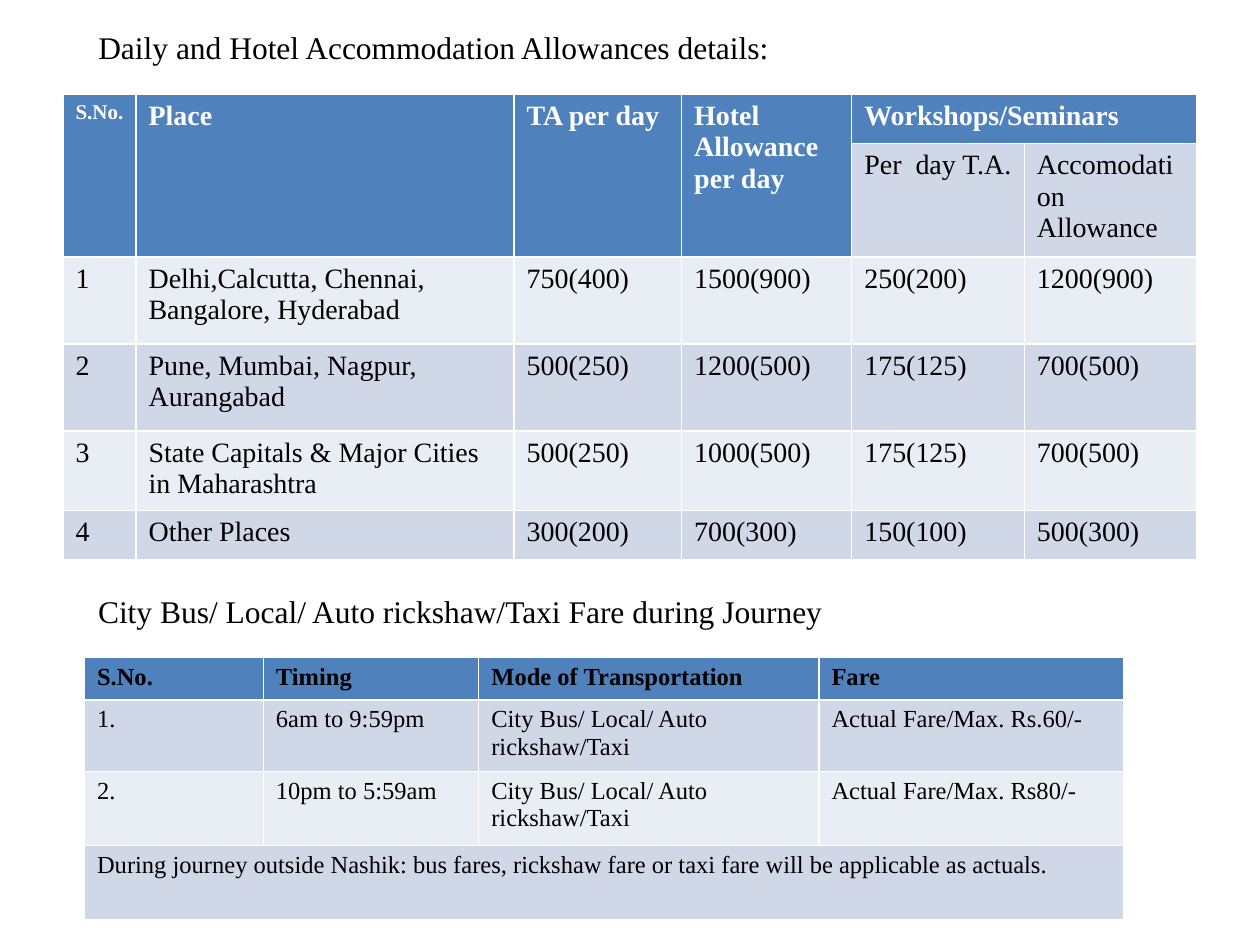
from dataclasses import dataclass

from pptx import Presentation
from pptx.dml.color import RGBColor as RGB
from pptx.enum.text import MSO_ANCHOR as ANCHOR, MSO_AUTO_SIZE as FIT, PP_ALIGN as ALIGN
from pptx.util import Inches, Pt

W, H = Inches(10), Inches(7.5)
FONT = "Times New Roman"
COLORS = {"header": "4F81BD", "odd": "D0D8E8", "even": "E9EDF4",
          "light": "FFFFFF", "dark": "000000"}


@dataclass
class TableSpec:
    """Lengths are percentages of the slide's width or height."""
    left: float
    top: float
    cols: list[float]
    rows: list[float]
    size: int
    header_color: str
    spans: list[tuple[int, int, int, int]]  # row, column, rows, columns
    cells: list[list[str]]


def across(share: float) -> int:
    return round(W * share / 100)


def down(share: float) -> int:
    return round(H * share / 100)


def format_text(tf, size: int, color: str, bold: bool = False) -> None:
    look = {"name": FONT, "size": Pt(size), "bold": bold}
    for p in tf.paragraphs:
        for r in p.runs:
            for key, value in look.items():
                setattr(r.font, key, value)
            r.font.color.rgb = RGB.from_string(COLORS[color])


def place_heading(sp, text: str, top: float) -> None:
    box = {"left": across(6.8), "top": down(top),
           "width": across(80), "height": down(5.33)}
    for key, value in box.items():
        setattr(sp, key, value)
    tf = sp.text_frame
    tf.text = text
    for key, value in {"word_wrap": True, "vertical_anchor": ANCHOR.TOP,
                       "auto_size": FIT.SHAPE_TO_FIT_TEXT}.items():
        setattr(tf, key, value)
    tf.paragraphs[0].alignment = ALIGN.LEFT
    format_text(tf, 18, "dark")


def draw_table(s, spec: TableSpec):
    table = s.shapes.add_table(
        len(spec.rows), len(spec.cols), across(spec.left), down(spec.top),
        across(sum(spec.cols)), down(sum(spec.rows))).table
    for col, share in zip(table.columns, spec.cols):
        col.width = across(share)
    for row, share in zip(table.rows, spec.rows):
        row.height = down(share)
    for row, col, n_rows, n_cols in spec.spans:
        table.cell(row, col).merge(table.cell(row + n_rows - 1, col + n_cols - 1))

    # Header row, then alternating bands
    for i, texts in enumerate(spec.cells):
        band = "header" if i == 0 else "odd" if i % 2 else "even"
        for j, text in enumerate(texts):
            cell = table.cell(i, j)
            cell.fill.solid()
            cell.fill.fore_color.rgb = RGB.from_string(COLORS[band])
            if text:
                cell.text = text
                format_text(cell.text_frame, spec.size,
                            spec.header_color if i == 0 else "dark", i == 0)
    return table


ALLOWANCES = TableSpec(
    left=5, top=10, size=16, header_color="light",
    cols=[5.8, 30, 13.3, 13.5, 13.7, 13.7],
    rows=[5.2, 10.27, 9.2, 9.2, 5.2, 5.2],
    spans=[(0, col, 2, 1) for col in range(4)] + [(0, 4, 1, 2)],
    cells=[
        ["S.No.", "Place", "TA per day", "Hotel Allowance per day", "Workshops/Seminars", ""],
        ["", "", "", "", "Per  day T.A.", "Accomodation Allowance"],
        ["1", "Delhi,Calcutta, Chennai, Bangalore, Hyderabad",
         "750(400)", "1500(900)", "250(200)", "1200(900)"],
        ["2", "Pune, Mumbai, Nagpur, Aurangabad",
         "500(250)", "1200(500)", "175(125)", "700(500)"],
        ["3", "State Capitals & Major Cities in Maharashtra",
         "500(250)", "1000(500)", "175(125)", "700(500)"],
        ["4", "Other Places", "300(200)", "700(300)", "150(100)", "500(300)"],
    ])

MODE = "City Bus/ Local/ Auto rickshaw/Taxi"
FARES = TableSpec(
    left=6.7, top=69.6, size=14, header_color="dark",
    cols=[14.2, 17.1, 27, 24.2],
    rows=[4.13, 7.07, 7.87, 7.87],
    spans=[(3, 0, 1, 4)],
    cells=[
        ["S.No.", "Timing", "Mode of Transportation", "Fare"],
        ["1.", "6am to 9:59pm", MODE, "Actual Fare/Max. Rs.60/-"],
        ["2.", "10pm to 5:59am", MODE, "Actual Fare/Max. Rs80/-"],
        ["During journey outside Nashik: bus fares, rickshaw fare or taxi fare "
         "will be applicable as actuals.", "", "", ""],
    ])


def main() -> None:
    prs = Presentation()
    prs.slide_width, prs.slide_height = W, H
    s = prs.slides.add_slide(prs.slide_layouts[5])

    # Allowances
    place_heading(s.shapes.title, "Daily and Hotel Accommodation Allowances details:", 2.27)
    allowances = draw_table(s, ALLOWANCES)
    format_text(allowances.cell(0, 0).text_frame, 12, "light", True)

    # Fares
    place_heading(s.shapes.add_textbox(0, 0, 0, 0), f"{MODE} Fare during Journey", 62)
    draw_table(s, FARES)

    prs.save("out.pptx")


if __name__ == "__main__":
    main()
